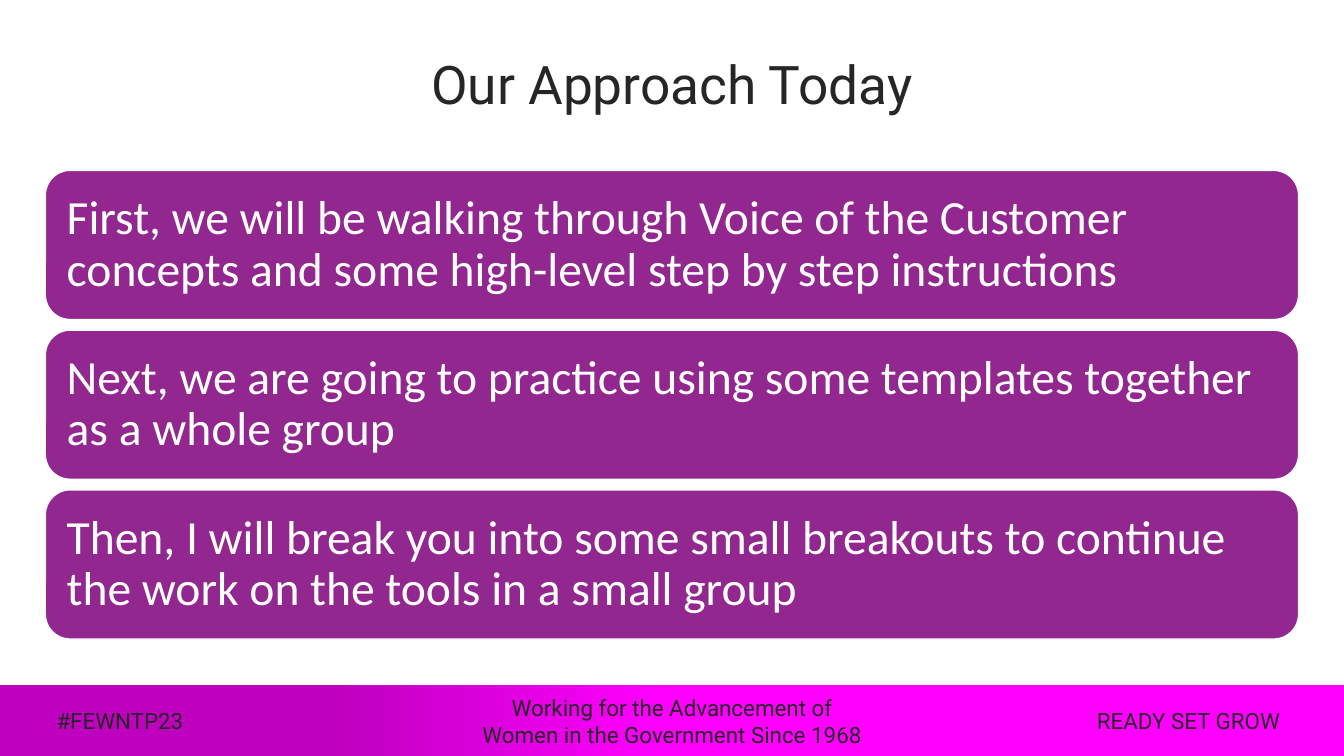
"""Build the slide "Our Approach Today"."""
from dataclasses import dataclass

from pptx import Presentation
from pptx.dml.color import RGBColor
from pptx.enum.shapes import MSO_SHAPE as Shape
from pptx.enum.text import MSO_ANCHOR as Anchor, MSO_AUTO_SIZE as AutoSize, PP_ALIGN as Align
from pptx.util import Inches, Pt

COLORS = {
    "text": "262626",
    "white": "FFFFFF",
    "step": "92278F",
    "bar_dark": "BF00BF",
    "bar_light": "FF00FF",
}
STEP_TOP, STEP_HEIGHT, STEP_PITCH = 1.69, 1.48, 1.585
LEFT, WIDTH = 0.45, 12.43


@dataclass
class FooterLabel:
    """A text in the footer bar."""
    text: str
    left: float
    width: float
    align: Align = Align.CENTER


STEPS = [
    "First, we will be walking through Voice of the Customer concepts "
    "and some high-level step by step instructions",
    "Next, we are going to practice using some templates together as a whole group",
    "Then, I will break you into some small breakouts to continue "
    "the work on the tools in a small group",
]
FOOTER = [
    FooterLabel("#FEWNTP23", 0.36, 1.66),
    FooterLabel("Working for the Advancement of\nWomen in the Government Since 1968", 4.39, 4.55),
    FooterLabel("READY SET GROW", 10.68, 2.29, Align.LEFT),
]


def rgb(name: str) -> RGBColor:
    """Return a named colour."""
    return RGBColor.from_string(COLORS[name])


def write(sp, text: str, *, size: float, font: str = "Roboto", color: str = "text",
          align: Align = Align.CENTER, anchor: Anchor = Anchor.MIDDLE,
          inset: float = 0, wrap: bool = True, spacing: float = 1.0) -> None:
    """Fill a shape with formatted text, one paragraph a line."""
    tf = sp.text_frame
    tf.text = text
    tf.auto_size = AutoSize.NONE
    tf.word_wrap = wrap
    tf.vertical_anchor = anchor
    tf.margin_left = tf.margin_right = tf.margin_top = tf.margin_bottom = Inches(inset)
    for p in tf.paragraphs:
        p.alignment = align
        p.line_spacing = spacing
        p.space_before = Pt(0)
        for r in p.runs:
            r.font.name = font
            r.font.size = Pt(size)
            r.font.color.rgb = rgb(color)


def add_bar(s) -> None:
    """Draw the gradient footer bar."""
    sp = s.shapes.add_shape(Shape.RECTANGLE, 0, Inches(6.8), Inches(13.33), Inches(0.7))
    sp.shadow.inherit = False
    sp.line.fill.background()
    sp.fill.gradient()
    sp.fill.gradient_angle = 0
    stops = [(0.25, "bar_dark"), (0.5, "bar_light")]
    for stop, (position, color) in zip(sp.fill.gradient_stops, stops):
        stop.position = position
        stop.color.rgb = rgb(color)


def add_label(s, label: FooterLabel) -> None:
    """Draw one footer label."""
    sp = s.shapes.add_textbox(Inches(label.left), Inches(6.94), Inches(label.width), Inches(0.42))
    write(sp, label.text, size=16, align=label.align, inset=0.2, wrap=False)


def add_title(s, text: str) -> None:
    """Place and format the title."""
    sp = s.shapes.title
    sp.left, sp.top, sp.width, sp.height = map(Inches, (LEFT, 0.31, WIDTH, 0.84))
    write(sp, text, size=38, anchor=Anchor.BOTTOM, spacing=0.9)


def add_step(s, index: int, text: str) -> None:
    """Draw one step card."""
    top = STEP_TOP + index * STEP_PITCH
    sp = s.shapes.add_shape(Shape.ROUNDED_RECTANGLE, Inches(LEFT), Inches(top),
                            Inches(WIDTH), Inches(STEP_HEIGHT))
    sp.shadow.inherit = False
    sp.fill.solid()
    sp.fill.fore_color.rgb = rgb("step")
    sp.line.color.rgb = rgb("white")
    sp.line.width = Pt(1)
    write(sp, text, size=34, font="Calibri", color="white", align=Align.LEFT,
          inset=0.14, spacing=0.9)


def main() -> None:
    """Build and save the presentation."""
    prs = Presentation()
    prs.slide_width, prs.slide_height = Inches(13.33), Inches(7.5)
    s = prs.slides.add_slide(prs.slide_layouts.get_by_name("Title Only"))
    add_bar(s)
    for label in FOOTER:
        add_label(s, label)
    add_title(s, "Our Approach Today")
    for index, text in enumerate(STEPS):
        add_step(s, index, text)
    prs.save("out.pptx")


if __name__ == "__main__":
    main()
